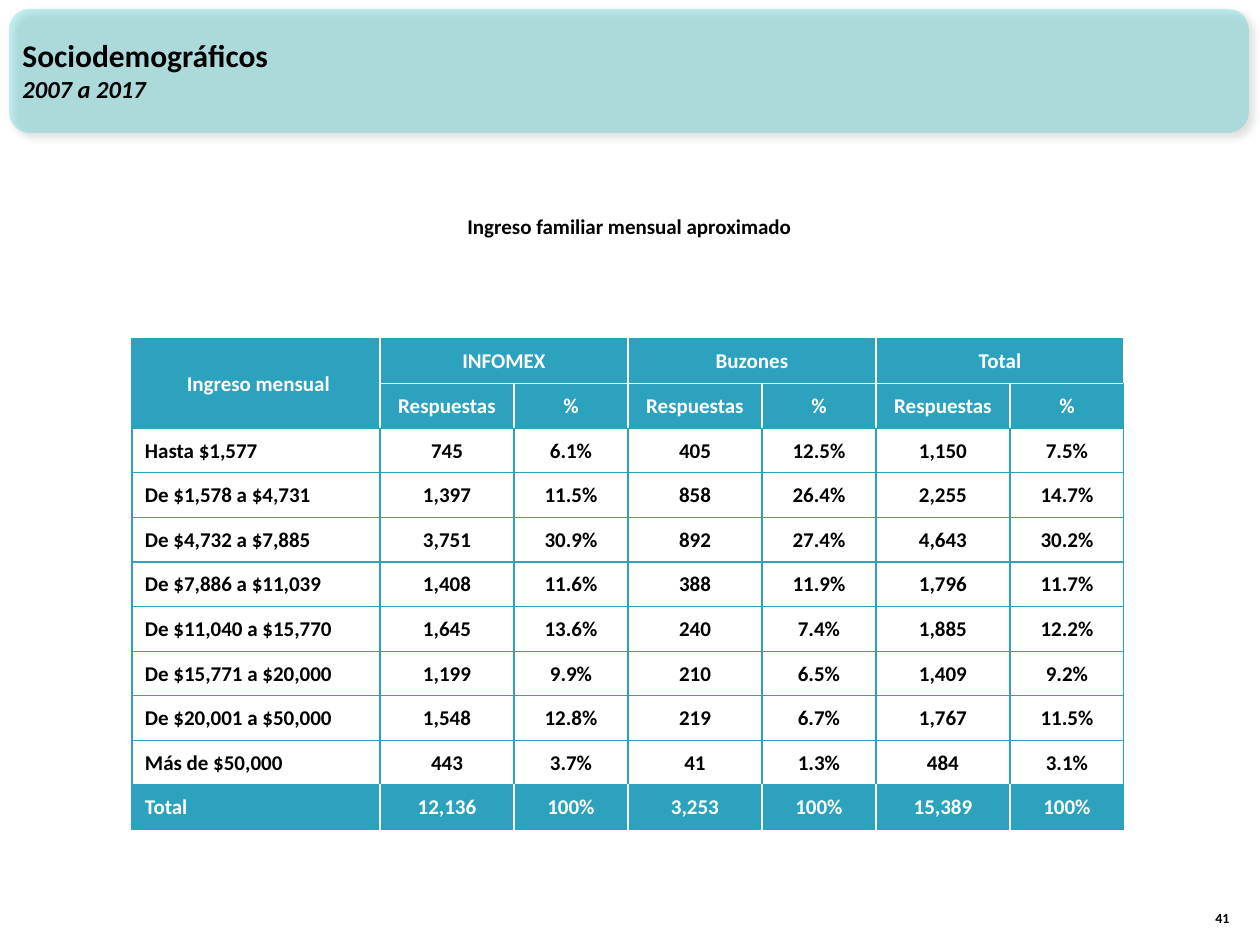
from lxml.etree import SubElement
from pptx import Presentation
from pptx.dml.color import RGBColor
from pptx.enum.shapes import MSO_SHAPE
from pptx.enum.text import MSO_ANCHOR, PP_ALIGN
from pptx.oxml import parse_xml
from pptx.oxml.ns import nsdecls, qn
from pptx.util import Pt

PX = 914400 // 126
TEAL = RGBColor(0x2D, 0xA2, 0xBF)
AQUA = RGBColor(0x33, 0xCC, 0xCC)
WHITE = RGBColor(255, 255, 255)
BLACK = RGBColor(0, 0, 0)


def style(para, size, color=BLACK, align=PP_ALIGN.LEFT):
    para.alignment = align
    font = para.font
    font.name = "Calibri"
    font.size = Pt(size)
    font.bold = True
    font.color.rgb = color


def border(cell, side, color):
    line = parse_xml(
        f'<a:ln{side} {nsdecls("a")} w="9525"><a:solidFill>'
        f'<a:srgbClr val="{color}"/></a:solidFill></a:ln{side}>'
    )
    cell._tc.get_or_add_tcPr().append(line)


deck = Presentation()
deck.slide_width = 1260 * PX
deck.slide_height = 945 * PX
slide = deck.slides.add_slide(deck.slide_layouts[6])
shapes = slide.shapes

band = shapes.add_shape(MSO_SHAPE.ROUNDED_RECTANGLE, 9 * PX, 9 * PX, 1240 * PX, 124 * PX)
band.shadow.inherit = False
band.fill.solid()
band.fill.fore_color.rgb = AQUA
band.line.fill.background()
tint = band._element.spPr.find(qn("a:solidFill"))[0]
SubElement(tint, qn("a:alpha"), val="30000")
glow = band._element.spPr.find(qn("a:effectLst"))
glow.append(parse_xml(
    f'<a:outerShdw {nsdecls("a")} blurRad="50800" dist="38100" dir="2700000" '
    'algn="tl" rotWithShape="0"><a:srgbClr val="000000">'
    '<a:alpha val="40000"/></a:srgbClr></a:outerShdw>'
))

texts = [
    (1192, 883, 50, 50, MSO_ANCHOR.BOTTOM, PP_ALIGN.RIGHT, [("41", 8)]),
    (102, 207, 1055, 38, MSO_ANCHOR.TOP, PP_ALIGN.CENTER,
     [("Ingreso familiar mensual aproximado", 12)]),
    (10, 11, 1155, 118, MSO_ANCHOR.MIDDLE, PP_ALIGN.LEFT,
     [("Sociodemográficos", 18), ("2007 a 2017", 14)]),
]
for left, top, width, height, anchor, align, lines in texts:
    box = shapes.add_textbox(left * PX, top * PX, width * PX, height * PX)
    frame = box.text_frame
    frame.word_wrap = True
    frame.vertical_anchor = anchor
    frame.text = "\n".join(text for text, size in lines)
    for para, (text, size) in zip(frame.paragraphs, lines):
        style(para, size, align=align)
        para.font.italic = size == 14

rows = [
    [" Ingreso mensual", "INFOMEX", "", "Buzones", "", "Total", ""],
    [""] + ["Respuestas", "%"] * 3,
    ["Hasta $1,577", "745", "6.1%", "405", "12.5%", "1,150", "7.5%"],
    ["De $1,578 a $4,731", "1,397", "11.5%", "858", "26.4%", "2,255", "14.7%"],
    ["De $4,732 a $7,885", "3,751", "30.9%", "892", "27.4%", "4,643", "30.2%"],
    ["De $7,886 a $11,039", "1,408", "11.6%", "388", "11.9%", "1,796", "11.7%"],
    ["De $11,040 a $15,770", "1,645", "13.6%", "240", "7.4%", "1,885", "12.2%"],
    ["De $15,771 a $20,000", "1,199", "9.9%", "210", "6.5%", "1,409", "9.2%"],
    ["De $20,001 a $50,000", "1,548", "12.8%", "219", "6.7%", "1,767", "11.5%"],
    ["Más de $50,000", "443", "3.7%", "41", "1.3%", "484", "3.1%"],
    ["Total", "12,136", "100%", "3,253", "100%", "15,389", "100%"],
]
widths = [248] + [134, 114] * 3
last = len(rows) - 1
end = len(widths) - 1
grid = shapes.add_table(
    len(rows), len(widths), 132 * PX, 339 * PX, sum(widths) * PX, 491 * PX
).table
grid.first_row = False
grid.horz_banding = False
for col, width in zip(grid.columns, widths):
    col.width = width * PX
for row in grid.rows:
    row.height = 491 * PX // len(rows)

for r, row in enumerate(rows):
    solid = r in (0, 1, last)
    for c, text in enumerate(row):
        cell = grid.cell(r, c)
        border(cell, "L", WHITE if solid and c > 0 else TEAL)
        border(cell, "R", WHITE if solid and c < end else TEAL)
        border(cell, "T", WHITE if r == 1 and c > 0 else TEAL)
        border(cell, "B", WHITE if r == 0 and c > 0 else TEAL)
        if solid:
            cell.fill.solid()
            cell.fill.fore_color.rgb = TEAL
        else:
            cell.fill.background()
        label = c == 0 and r > 1
        cell.vertical_anchor = MSO_ANCHOR.MIDDLE
        cell.margin_left = (5 if label else 1) * PX
        cell.margin_right = cell.margin_top = PX
        cell.margin_bottom = 0
        cell.text = text
        para = cell.text_frame.paragraphs[0]
        style(para, 12, WHITE if solid else BLACK,
              PP_ALIGN.LEFT if label else PP_ALIGN.CENTER)
        if label:
            para._p.get_or_add_pPr().set("marL", str(8 * PX))

grid.cell(0, 0).merge(grid.cell(1, 0))
for c in range(1, end, 2):
    grid.cell(0, c).merge(grid.cell(0, c + 1))

deck.save("out.pptx")
